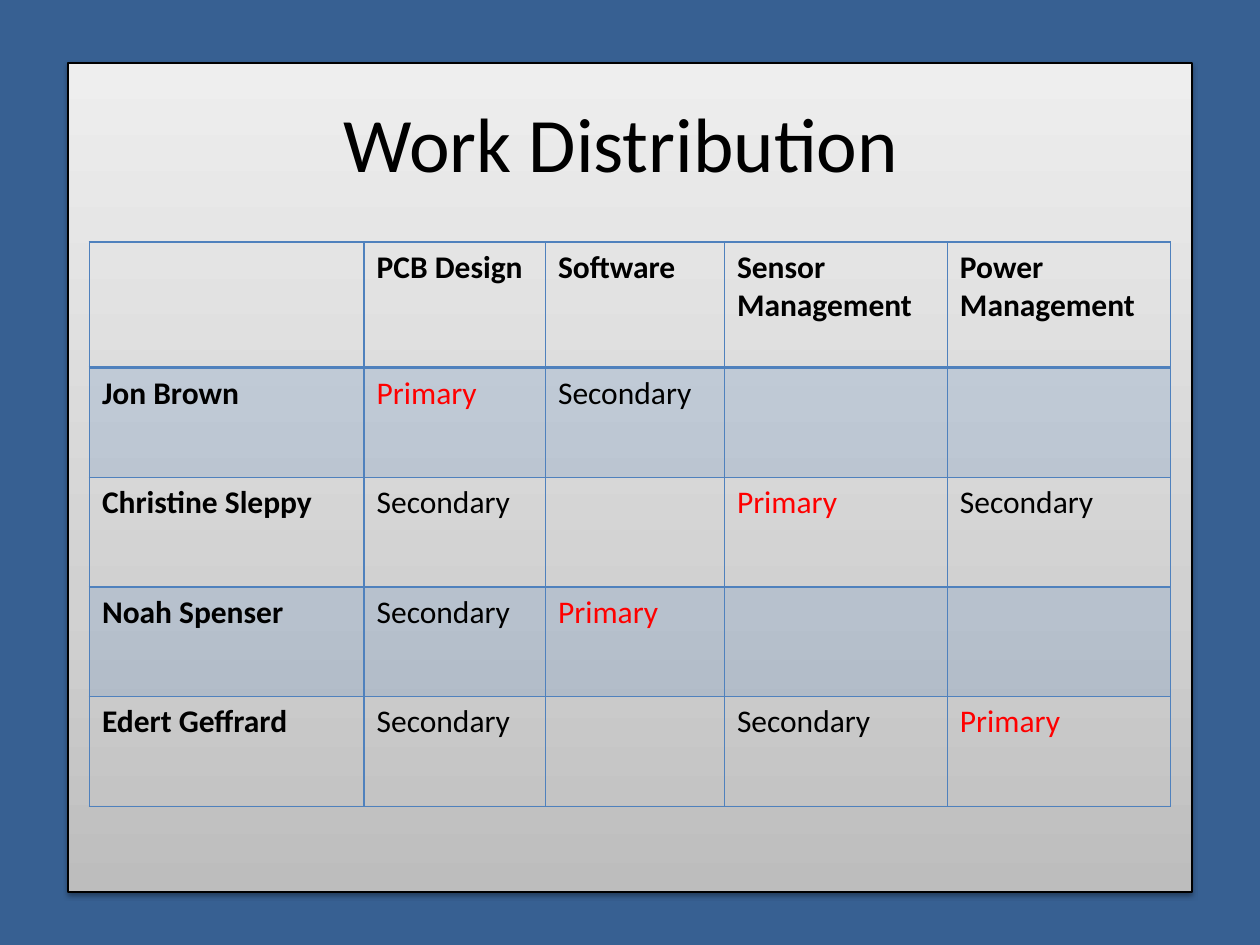
"""Build the Work Distribution slide with its responsibility table."""
from dataclasses import dataclass

from pptx import Presentation
from pptx.dml.color import RGBColor
from pptx.enum.shapes import MSO_SHAPE as Shape
from pptx.enum.text import MSO_ANCHOR as Anchor, PP_ALIGN as Align
from pptx.oxml import parse_xml
from pptx.oxml.ns import nsdecls
from pptx.util import Inches, Pt


@dataclass(frozen=True)
class Theme:
    font: str = "Calibri"
    title_size: int = 44
    cell_size: int = 18
    background: str = "376092"
    ink: str = "000000"
    accent: str = "4F81BD"
    primary: str = "FF0000"
    band_opacity: int = 20
    panel_stops: tuple = ((0, "BDBDBD"), (35, "D1D1D1"), (100, "EEEEEE"))


@dataclass(frozen=True)
class Box:
    left: float
    top: float
    width: float
    height: float

    def lengths(self) -> list:
        return [Inches(n) for n in (self.left, self.top, self.width, self.height)]


@dataclass(frozen=True)
class Member:
    name: str
    roles: tuple


THEME = Theme()
PANEL = Box(0.54, 0.5, 8.92, 6.58)
TITLE = Box(0.5, 0.5, 9, 1.25)
GRID = Box(0.71, 1.92, 8.58, 4.49)
COLUMN_WIDTHS = (2.18, 1.44, 1.42, 1.77, 1.77)
ROW_HEIGHTS = (1,) + (0.87,) * 4
HEADINGS = ("", "PCB Design", "Software", "Sensor Management", "Power Management")
TEAM = (
    Member("Jon Brown", ("Primary", "Secondary", "", "")),
    Member("Christine Sleppy", ("Secondary", "", "Primary", "Secondary")),
    Member("Noah Spenser", ("Secondary", "Primary", "", "")),
    Member("Edert Geffrard", ("Secondary", "", "Secondary", "Primary")),
)


def write(paragraph, text: str, size: int, color: str, bold: bool = False) -> None:
    """Add one formatted run to a paragraph."""
    run = paragraph.add_run()
    run.text = text
    formats = {"name": THEME.font, "size": Pt(size), "bold": bold}
    for attribute, value in formats.items():
        setattr(run.font, attribute, value)
    run.font.color.rgb = RGBColor.from_string(color)


def draw_panel(slide) -> None:
    """Draw the shaded panel behind the content."""
    panel = slide.shapes.add_shape(Shape.RECTANGLE, *PANEL.lengths())
    stops = "".join(
        f'<a:gs pos="{position * 1000}"><a:srgbClr val="{color}"/></a:gs>'
        for position, color in THEME.panel_stops
    )
    properties = panel.element.spPr
    properties.insert(2, parse_xml(
        f'<a:gradFill {nsdecls("a")} rotWithShape="1"><a:gsLst>{stops}</a:gsLst>'
        '<a:lin ang="16200000" scaled="0"/></a:gradFill>'
    ))
    panel.line.color.rgb = RGBColor.from_string(THEME.ink)
    panel.line.width = Pt(0.75)
    panel.shadow.inherit = False
    properties.xpath("a:effectLst")[0].append(parse_xml(
        f'<a:outerShdw {nsdecls("a")} blurRad="{Pt(3.1)}" dist="{Pt(1.6)}" '
        f'dir="5400000" rotWithShape="0"><a:srgbClr val="{THEME.ink}">'
        '<a:alpha val="38000"/></a:srgbClr></a:outerShdw>'
    ))


def draw_title(slide) -> None:
    """Write the centred slide title."""
    frame = slide.shapes.add_textbox(*TITLE.lengths()).text_frame
    frame.word_wrap = True
    frame.vertical_anchor = Anchor.MIDDLE
    heading = frame.paragraphs[0]
    heading.alignment = Align.CENTER
    write(heading, "Work Distribution ", THEME.title_size, THEME.ink)


def shade(cell, banded: bool) -> None:
    """Give a cell a translucent band or no fill."""
    if not banded:
        cell.fill.background()
        return
    cell.fill.solid()
    cell.fill.fore_color.rgb = RGBColor.from_string(THEME.accent)
    tint = cell._tc.tcPr.xpath("a:solidFill/a:srgbClr")[0]
    tint.append(parse_xml(f'<a:alpha {nsdecls("a")} val="{THEME.band_opacity * 1000}"/>'))


def outline(cell, row: int) -> None:
    """Set the four borders, heavier under the header row."""
    widths = {"L": 1, "R": 1, "T": 2 if row == 1 else 1, "B": 2 if row == 0 else 1}
    for order, (side, width) in enumerate(widths.items()):
        cell._tc.tcPr.insert(order, parse_xml(
            f'<a:ln{side} {nsdecls("a")} w="{Pt(width)}"><a:solidFill>'
            f'<a:srgbClr val="{THEME.accent}"/></a:solidFill></a:ln{side}>'
        ))


def draw_table(slide) -> None:
    """Draw the table of members and their roles."""
    content = [HEADINGS] + [(member.name, *member.roles) for member in TEAM]
    table = slide.shapes.add_table(len(content), len(HEADINGS), *GRID.lengths()).table
    for column, width in zip(table.columns, COLUMN_WIDTHS):
        column.width = Inches(width)
    for row, height in zip(table.rows, ROW_HEIGHTS):
        row.height = Inches(height)
    for r, values in enumerate(content):
        for c, value in enumerate(values):
            cell = table.cell(r, c)
            shade(cell, r % 2 == 1)
            outline(cell, r)
            if value:
                color = THEME.primary if value == "Primary" else THEME.ink
                write(cell.text_frame.paragraphs[0], value, THEME.cell_size, color,
                      r == 0 or c == 0)


def main() -> None:
    """Assemble and save the slide."""
    deck = Presentation()
    deck.slide_width, deck.slide_height = Inches(10), Inches(7.5)
    slide = deck.slides.add_slide(deck.slide_layouts[6])
    slide.background.fill.solid()
    slide.background.fill.fore_color.rgb = RGBColor.from_string(THEME.background)
    draw_panel(slide)
    draw_title(slide)
    draw_table(slide)
    deck.save("out.pptx")


if __name__ == "__main__":
    main()
